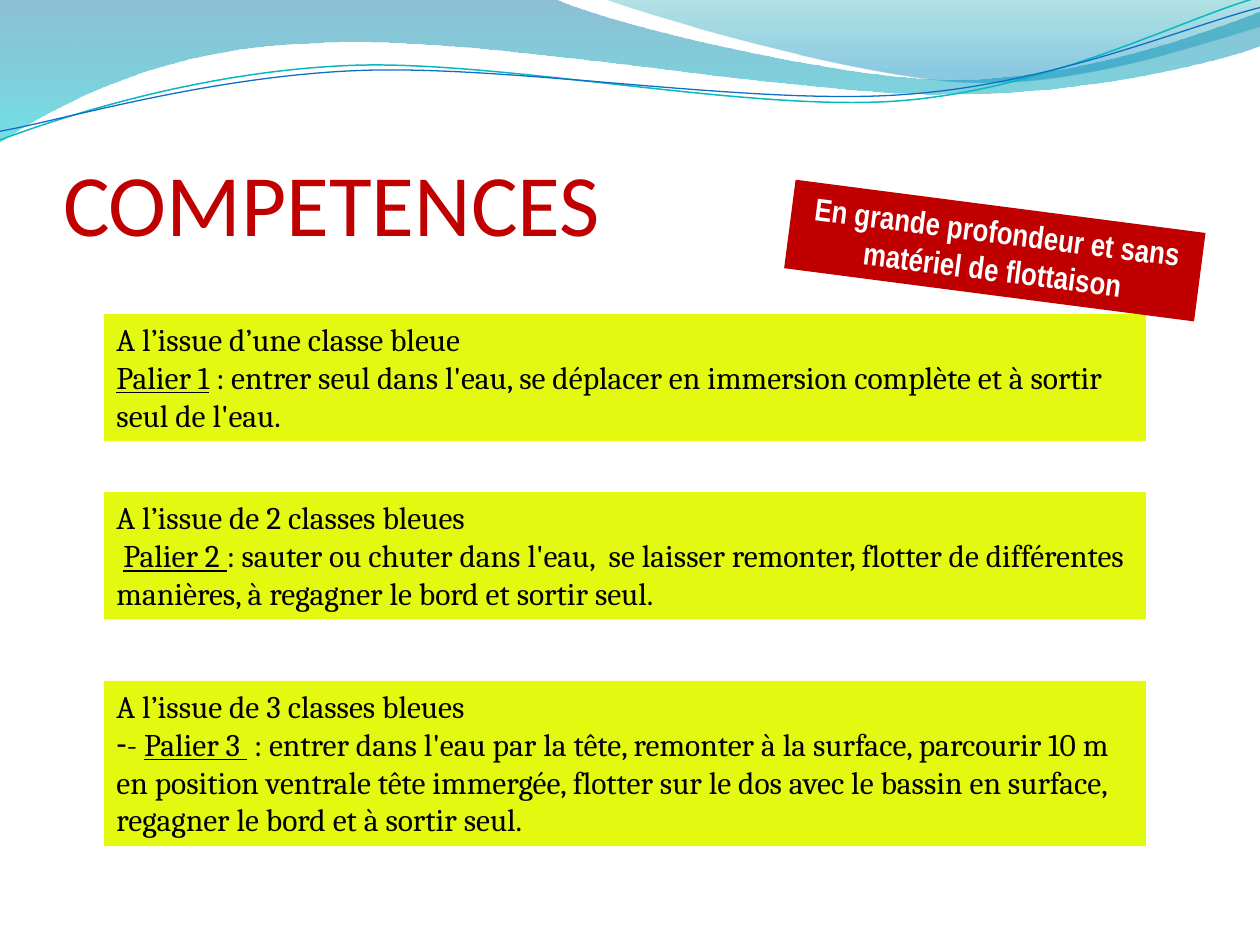
from lxml.etree import SubElement
from pptx import Presentation
from pptx.dml.color import RGBColor
from pptx.enum.shapes import MSO_SHAPE as Shape
from pptx.enum.text import MSO_ANCHOR as Anchor, MSO_AUTO_SIZE as AutoSize, PP_ALIGN as Align
from pptx.oxml.ns import qn
from pptx.util import Pt

RED, YELLOW, BLACK, WHITE = "C00000", "E3F90F", "000000", "FFFFFF"
LINE_TILT = -2.7

# Outlines: a pair is a line to that point, six numbers are a Bézier curve
UPPER_BAND = [
    (0, 0), (316.8, -0.7),
    (342.7, 12.2, 478.1, 45.4, 545.8, 45.4),
    (614.2, 45.4, 689.8, 18.7, 720, 6.5),
    (720.7, 25.9),
    (707.8, 31.7, 626.4, 54.7, 537.1, 54),
    (447.8, 54, 275, 20.2, 185, 24.5),
    (92.9, 25.9, 33.1, 59.8, -0.7, 81.4),
]
RIGHT_BAND = [
    (344.9, -0.7),
    (366.5, 7.9, 491, 44.6, 553.7, 46.8),
    (616.3, 49.7, 691.9, 23, 720, 15.1),
    (720, 0),
]
TEAL_LINE = [
    (-1.4, 63),
    (33.8, 51.7, 114.1, 29.4, 199.8, 29.9),
    (284.8, 30.3, 425.8, 67.3, 512.4, 64.9),
    (599, 62.4, 676.5, 25.7, 720.2, 15.6),
]
BLUE_LINE = [
    (-1.1, 58),
    (32.9, 53.8, 118.3, 32.5, 204.1, 33),
    (290.6, 33.4, 428.9, 63.8, 515.5, 61.4),
    (601.3, 59.6, 678.4, 30.1, 721.4, 21.3),
]

# Each card: top, height, heading, bullet, runs as (text, underlined)
CARDS = [
    (179.3, 72.7, "A l’issue d’une classe bleue", None, [
        ("Palier 1", True),
        (" : entrer seul dans l'eau, se déplacer en immersion complète et à sortir "
         "seul de l'eau.", False)]),
    (281.2, 72.7, "A l’issue de 2 classes bleues", None, [
        (" ", False), ("Palier 2 ", True),
        (": sauter ou chuter dans l'eau,  se laisser remonter, flotter de différentes "
         "manières, à regagner le bord et sortir seul.", False)]),
    (389.1, 94.5, "A l’issue de 3 classes bleues", "-", [
        ("- ", False), ("Palier 3 ", True),
        (" : entrer dans l'eau par la tête, remonter à la surface, parcourir 10 m en "
         "position ventrale tête immergée, flotter sur le dos avec le bassin en surface, "
         "regagner le bord et à sortir seul.", False)]),
]


def color(value):
    return RGBColor.from_string(value)


def add_outline(slide, left, top, outline, close):
    """Add a freeform; each curve's three points become one Bézier segment."""
    points = [(Pt(left + x), Pt(top + y)) for segment in outline
              for x, y in zip(segment[::2], segment[1::2])]
    builder = slide.shapes.build_freeform(*points[0])
    builder.add_line_segments(points[1:], close=close)
    shape = builder.convert_to_shape()
    shape.shadow.inherit = False
    lines = iter(list(shape._element.iter(qn("a:lnTo"))))
    for segment in outline[1:]:
        first = next(lines)
        if len(segment) == 6:
            first.tag = qn("a:cubicBezTo")
            for _ in range(2):
                line = next(lines)
                first.append(line[0])
                line.getparent().remove(line)
    return shape


def add_band(slide, left, top, outline, stops):
    """Add a filled wave; stops are (position, colour, opacity in percent)."""
    shape = add_outline(slide, left, top, outline, True)
    shape.fill.gradient()
    shape.fill.gradient_angle = 270
    for stop, (position, value, _) in zip(shape.fill.gradient_stops, stops):
        stop.position = position
        stop.color.rgb = color(value)
    for element, (_, _, opacity) in zip(shape._element.iter(qn("a:srgbClr")), stops):
        SubElement(element, qn("a:alpha")).set("val", str(opacity * 1000))
    shape.line.fill.background()


def add_wave_line(slide, left, top, outline, value, width):
    shape = add_outline(slide, left, top, outline, False)
    shape.rotation = LINE_TILT
    shape.fill.background()
    shape.line.color.rgb = color(value)
    shape.line.width = Pt(width)


def add_run(paragraph, text, font="Cambria", size=18, value=BLACK, bold=None, underline=None):
    run = paragraph.add_run()
    run.text = text
    run.font.name, run.font.size = font, Pt(size)
    run.font.color.rgb = color(value)
    run.font.bold, run.font.underline = bold, underline


def add_box(slide, left, top, width, height, fill):
    shape = slide.shapes.add_shape(Shape.RECTANGLE, Pt(left), Pt(top), Pt(width), Pt(height))
    shape.shadow.inherit = False
    shape.fill.solid()
    shape.fill.fore_color.rgb = color(fill)
    shape.line.fill.background()
    frame = shape.text_frame
    frame.word_wrap = True
    frame.auto_size = AutoSize.SHAPE_TO_FIT_TEXT
    frame.vertical_anchor = Anchor.TOP
    return shape


def add_waves(slide, left, top):
    add_band(slide, left, top, UPPER_BAND, [(0, "0074A1", 45), (1, "00C6CF", 55)])
    add_band(slide, left, top, RIGHT_BAND, [(0, "00A1A9", 30), (0.8, "008BBF", 45)])
    add_wave_line(slide, left, top, TEAL_LINE, "0AB8BF", 0.85)
    add_wave_line(slide, left, top, BLUE_LINE, "0F6FC6", 0.75)


def add_title(slide, left, top, width, height, text):
    frame = slide.shapes.add_textbox(Pt(left), Pt(top), Pt(width), Pt(height)).text_frame
    frame.word_wrap = True
    frame.vertical_anchor = Anchor.BOTTOM
    frame.margin_left = frame.margin_right = frame.margin_bottom = 0
    add_run(frame.paragraphs[0], text, font="Calibri", size=50, value=RED)


def add_card(slide, left, top, width, height, heading, bullet, runs):
    frame = add_box(slide, left, top, width, height, YELLOW).text_frame
    add_run(frame.paragraphs[0], heading)
    body = frame.add_paragraph()
    for text, underline in runs:
        add_run(body, text, underline=underline)
    for paragraph in frame.paragraphs:
        paragraph.alignment = Align.LEFT
    if bullet:
        properties = body._p.get_or_add_pPr()
        SubElement(properties, qn("a:buFont")).set("typeface", "Arial")
        SubElement(properties, qn("a:buChar")).set("char", bullet)


def add_banner(slide, left, top, width, height, text):
    shape = add_box(slide, left, top, width, height, RED)
    shape.rotation = 7.4
    paragraph = shape.text_frame.paragraphs[0]
    paragraph.alignment = Align.CENTER
    add_run(paragraph, text, font="Arial Narrow", value=WHITE, bold=True)


def main():
    presentation = Presentation()
    presentation.slide_width, presentation.slide_height = Pt(720), Pt(540)
    slide = presentation.slides.add_slide(presentation.slide_layouts[6])
    add_waves(slide, 0, 0)
    add_title(slide, 36, 55.4, 653.8, 90, "COMPETENCES")
    for top, height, heading, bullet, runs in CARDS:
        add_card(slide, 59.5, top, 595.4, height, heading, bullet, runs)
    add_banner(slide, 450.4, 117.7, 236.2, 51,
               "En grande profondeur et sans matériel de flottaison")
    presentation.save("out.pptx")


if __name__ == "__main__":
    main()
